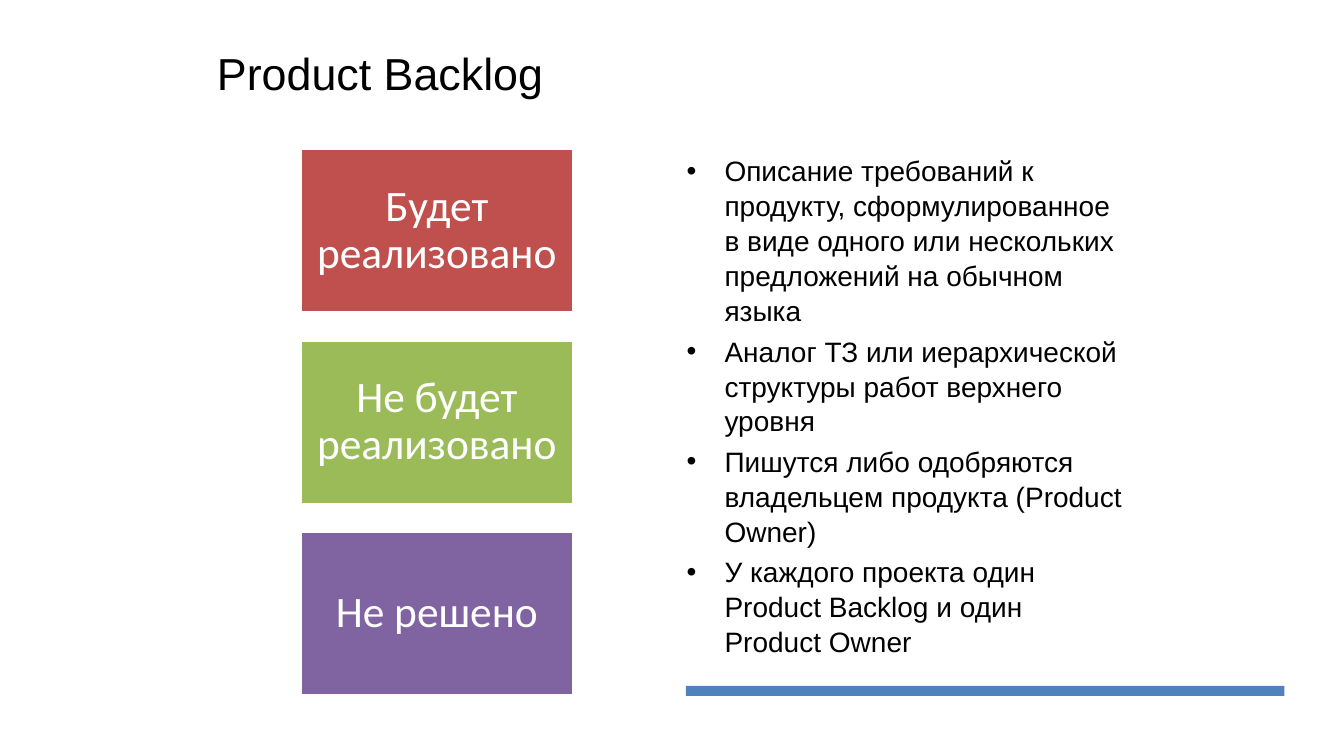
from lxml import etree
from pptx import Presentation
from pptx.dml.color import RGBColor
from pptx.enum import shapes, text
from pptx.oxml import ns
from pptx.util import Pt

TITLE = "Product Backlog"
STATES = [
    ("Будет реализовано", "C0504D"),
    ("Не будет реализовано", "9BBB59"),
    ("Не решено", "8064A2"),
]
POINTS = [
    "Описание требований к продукту, сформулированное в виде одного "
    "или нескольких предложений на обычном языка",
    "Аналог ТЗ или иерархической структуры работ верхнего уровня",
    "Пишутся либо одобряются владельцем продукта (Product Owner)",
    "У каждого проекта один Product Backlog и один Product Owner",
]


def rgb(code):
    return RGBColor.from_string(code)


def bullet(para, indent):
    """Give the paragraph a round bullet with a hanging indent in points."""
    props = para._p.get_or_add_pPr()
    props.set("marL", str(Pt(indent)))
    props.set("indent", str(-Pt(indent)))
    font = etree.SubElement(props, ns.qn("a:buFont"))
    font.set("typeface", "Arial")
    etree.SubElement(props, ns.qn("a:buChar")).set("char", "•")


def write(shape, lines, size, font="Arial", color="000000", pad=(3, 1.5, 3, 1.5),
          align=text.PP_ALIGN.LEFT, anchor=text.MSO_ANCHOR.TOP,
          spacing=1.0, gap=0, indent=0):
    """Fill a shape with paragraphs; pad is left, top, right, bottom."""
    frame = shape.text_frame
    frame.word_wrap = True
    frame.auto_size = text.MSO_AUTO_SIZE.NONE
    frame.vertical_anchor = anchor
    (frame.margin_left, frame.margin_top,
     frame.margin_right, frame.margin_bottom) = map(Pt, pad)
    for i, line in enumerate(lines):
        para = frame.add_paragraph() if i else frame.paragraphs[0]
        para.alignment = align
        para.line_spacing = spacing
        if i and gap:
            para.space_before = Pt(gap)
        if indent:
            bullet(para, indent)
        run = para.add_run()
        run.text = line
        run.font.size = Pt(size)
        run.font.name = font
        run.font.color.rgb = rgb(color)


def block(slide, box, fill, line=None):
    shape = slide.shapes.add_shape(shapes.MSO_SHAPE.RECTANGLE, *map(Pt, box))
    shape.shadow.inherit = False
    shape.fill.solid()
    shape.fill.fore_color.rgb = rgb(fill)
    if line:
        shape.line.color.rgb = rgb(line)
        shape.line.width = Pt(2)
    else:
        shape.line.fill.background()
    return shape


def title(slide, box):
    area = slide.shapes.add_textbox(*map(Pt, box))
    write(area, [TITLE], 32, pad=(3, 5, 3, 1.5))


def points(slide, box):
    area = slide.shapes.add_textbox(*map(Pt, box))
    write(area, POINTS, 20, pad=(3, 2.5, 3, 1.5), spacing=1.04, gap=4, indent=27)


def states(slide, box):
    """Stack one block per state, evenly over the height of the box."""
    left, top, width, height = box
    tall = 117
    step = (height - tall) / (len(STATES) - 1)
    for i, (name, fill) in enumerate(STATES):
        shape = block(slide, (left, top + i * step, width, tall), fill, "FFFFFF")
        write(shape, [name], 31, "Calibri", "FFFFFF", pad=(9, 9, 9, 9),
              align=text.PP_ALIGN.CENTER, anchor=text.MSO_ANCHOR.MIDDLE,
              spacing=0.9)


def main():
    deck = Presentation()
    deck.slide_width, deck.slide_height = Pt(960), Pt(540)
    slide = deck.slides.add_slide(deck.slide_layouts[6])
    block(slide, (490, 490, 427.5, 7), "4F81BD")
    title(slide, (152, 28, 656, 57))
    points(slide, (487.5, 106.5, 320.5, 368.5))
    states(slide, (214.5, 106.5, 195, 390))
    deck.save("out.pptx")


if __name__ == "__main__":
    main()
